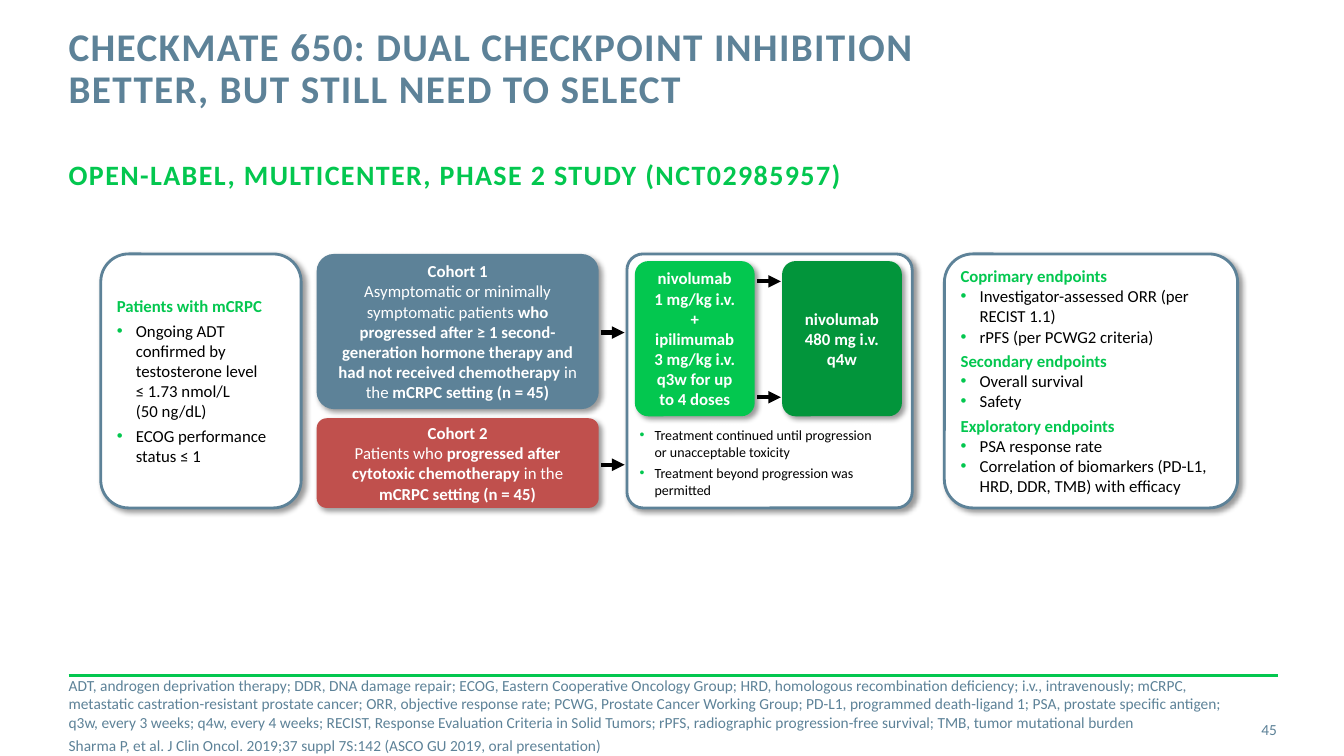
from copy import deepcopy
from dataclasses import dataclass
from typing import Optional

from lxml.etree import SubElement
from pptx import Presentation
from pptx.dml.color import RGBColor
from pptx.enum.shapes import MSO_CONNECTOR, MSO_SHAPE
from pptx.enum.text import MSO_ANCHOR, PP_ALIGN
from pptx.oxml.ns import qn
from pptx.util import Cm, Pt

FONT = "Calibri"
WHITE = RGBColor(0xFF, 0xFF, 0xFF)
BLACK = RGBColor(0x00, 0x00, 0x00)
SLATE = RGBColor(0x5D, 0x82, 0x98)
GREEN = RGBColor(0x03, 0xC7, 0x4F)
DARK_GREEN = RGBColor(0x02, 0x95, 0x3B)
RED = RGBColor(0xC0, 0x50, 0x4D)

ROW_TOP, ROW_HEIGHT = 6.4, 6.4
COHORT_LEFT, COHORT_WIDTH = 7.98, 7.11
DOSE_TOP, DOSE_WIDTH, DOSE_HEIGHT = 6.58, 3.02, 3.91
ARROW_LENGTH = 0.6


@dataclass(frozen=True)
class Phrase:
    text: str
    bold: bool = False


@dataclass(frozen=True)
class Line:
    phrases: tuple[Phrase, ...]
    color: RGBColor = BLACK
    size: float = 12
    after: float = 0
    indent: float = 0
    align: PP_ALIGN = PP_ALIGN.LEFT
    tracking: int = 0
    spacing: Optional[float] = None


@dataclass(frozen=True)
class Box:
    left: float
    top: float
    width: float
    height: float
    lines: tuple[Line, ...]
    corner: float = 0.112
    fill: RGBColor = WHITE
    outline: Optional[RGBColor] = None
    anchor: MSO_ANCHOR = MSO_ANCHOR.MIDDLE


@dataclass(frozen=True)
class Arrow:
    left: float
    top: float


def heading(text: str, after: float = 0) -> Line:
    return Line((Phrase(text, True),), GREEN, after=after)


def bullet(text: str, after: float = 0, size: float = 12, indent: float = 0.48) -> Line:
    return Line((Phrase(text),), size=size, after=after, indent=indent)


def centred(*phrases: Phrase, after: float = 0) -> Line:
    return Line(phrases, WHITE, after=after, align=PP_ALIGN.CENTER)


def write_line(paragraph, line: Line) -> None:
    paragraph.alignment = line.align
    paragraph.space_after = Pt(line.after)
    if line.spacing:
        paragraph.line_spacing = Pt(line.spacing)
    if line.indent:
        properties = paragraph._p.get_or_add_pPr()
        properties.set("marL", str(Cm(line.indent)))
        properties.set("indent", str(-Cm(line.indent)))
        SubElement(SubElement(properties, qn("a:buClr")), qn("a:srgbClr"), val=str(GREEN))
        SubElement(properties, qn("a:buFont"), typeface="Arial")
        SubElement(properties, qn("a:buChar"), char="•")
    first, *others = line.phrases
    paragraph.text = first.text
    styled = [(run, first.bold) for run in paragraph.runs]
    for phrase in others:
        run = paragraph.add_run()
        run.text = phrase.text
        styled.append((run, phrase.bold))
    for run, bold in styled:
        run.font.name = FONT
        run.font.size = Pt(line.size)
        run.font.bold = bold
        run.font.color.rgb = line.color
        if line.tracking:
            run.font._element.set("spc", str(line.tracking))
    # Line breaks keep the height of the text around them
    for line_break in paragraph._p.findall(qn("a:br")):
        line_break.append(deepcopy(styled[0][0].font._element))


def write_lines(text_frame, lines: tuple[Line, ...]) -> None:
    text_frame.word_wrap = True
    for index, line in enumerate(lines):
        write_line(text_frame.add_paragraph() if index else text_frame.paragraphs[0], line)


def add_text(slide, left: float, top: float, width: float, height: float,
             *lines: Line, anchor: MSO_ANCHOR = MSO_ANCHOR.TOP) -> None:
    text_frame = slide.shapes.add_textbox(Cm(left), Cm(top), Cm(width), Cm(height)).text_frame
    text_frame.margin_left = text_frame.margin_right = 0
    text_frame.margin_top = text_frame.margin_bottom = 0
    text_frame.vertical_anchor = anchor
    write_lines(text_frame, lines)


def add_box(slide, box: Box) -> None:
    shape = slide.shapes.add_shape(MSO_SHAPE.ROUNDED_RECTANGLE, Cm(box.left), Cm(box.top),
                                   Cm(box.width), Cm(box.height))
    shape.adjustments[0] = box.corner
    shape.fill.solid()
    shape.fill.fore_color.rgb = box.fill
    if box.outline is None:
        shape.line.fill.background()
    else:
        shape.line.color.rgb = box.outline
        shape.line.width = Pt(2)
    shape.shadow.inherit = False
    shadow = SubElement(shape._element.spPr.find(qn("a:effectLst")), qn("a:outerShdw"),
                        blurRad=str(Pt(4)), dist=str(Pt(3)), dir=str(45 * 60000),
                        algn="tl", rotWithShape="0")
    color = SubElement(shadow, qn("a:srgbClr"), val=str(BLACK))
    SubElement(color, qn("a:alpha"), val="40000")
    text_frame = shape.text_frame
    text_frame.margin_left = text_frame.margin_right = Cm(0.2)
    text_frame.margin_top = text_frame.margin_bottom = Cm(0.13)
    text_frame.vertical_anchor = box.anchor
    write_lines(text_frame, box.lines)


def add_line(slide, left: float, top: float, length: float, color: RGBColor,
             width: float, arrow: bool = False) -> None:
    connector = slide.shapes.add_connector(MSO_CONNECTOR.STRAIGHT, Cm(left), Cm(top),
                                           Cm(left + length), Cm(top))
    connector.line.color.rgb = color
    connector.line.width = Pt(width)
    if arrow:
        SubElement(connector.line._get_or_add_ln(), qn("a:tailEnd"), type="triangle")
    SubElement(connector._element.spPr, qn("a:effectLst"))


SETTING = (Phrase("in the "), Phrase("mCRPC setting (n = 45)", True))
BOXES = (
    # Patients and endpoints
    Box(2.54, ROW_TOP, 5.05, ROW_HEIGHT, (
        heading("Patients with mCRPC", 3),
        bullet("Ongoing ADT confirmed by testosterone level \n≤ 1.73 nmol/L \n(50 ng/dL)", 3),
        bullet("ECOG performance status ≤ 1", 3)), 0.139, outline=SLATE),
    Box(23.8, ROW_TOP, 7.39, ROW_HEIGHT, (
        heading("Coprimary endpoints"),
        bullet("Investigator-assessed ORR (per RECIST 1.1)"),
        bullet("rPFS (per PCWG2 criteria)", 3),
        heading("Secondary endpoints"),
        bullet("Overall survival"),
        bullet("Safety", 3),
        heading("Exploratory endpoints"),
        bullet("PSA response rate"),
        bullet("Correlation of biomarkers (PD-L1, HRD, DDR, TMB) with efficacy", 3)), outline=SLATE),
    # Cohorts
    Box(COHORT_LEFT, ROW_TOP, COHORT_WIDTH, 3.91, (
        centred(Phrase("Cohort 1", True)),
        centred(Phrase("Asymptomatic or minimally symptomatic patients "),
                Phrase("who progressed after ≥ 1 second-generation hormone therapy and "
                       "had not received chemotherapy ", True), *SETTING)), fill=SLATE),
    Box(COHORT_LEFT, 10.54, COHORT_WIDTH, 2.26, (
        centred(Phrase("Cohort 2", True)),
        centred(Phrase("Patients who "), Phrase("progressed after cytotoxic chemotherapy ", True),
                *SETTING)), fill=RED),
    # Treatment
    Box(15.8, ROW_TOP, 7.19, ROW_HEIGHT, (
        bullet("Treatment continued until progression \nor unacceptable toxicity", 3, 10, 0.38),
        bullet("Treatment beyond progression was permitted", 3, 10, 0.38)),
        0.063, outline=SLATE, anchor=MSO_ANCHOR.BOTTOM),
    Box(16, DOSE_TOP, DOSE_WIDTH, DOSE_HEIGHT, (
        centred(Phrase("nivolumab\n1 mg/kg i.v.\n+\nipilimumab\n3 mg/kg i.v.\nq3w for up\nto 4 doses",
                       True), after=4),), fill=GREEN),
    Box(19.71, DOSE_TOP, DOSE_WIDTH, DOSE_HEIGHT, (
        centred(Phrase("nivolumab\n480 mg i.v.\nq4w", True), after=4),), fill=DARK_GREEN),
)
ARROWS = (Arrow(19.08, 7.09), Arrow(19.08, 10.01), Arrow(15.14, 8.38), Arrow(15.14, 11.71))
ABBREVIATIONS = (
    "ADT, androgen deprivation therapy; DDR, DNA damage repair; ECOG, Eastern Cooperative Oncology "
    "Group; HRD, homologous recombination deficiency; i.v., intravenously; mCRPC, metastatic "
    "castration-resistant prostate cancer; ORR, objective response rate; PCWG, Prostate Cancer "
    "Working Group; PD-L1, programmed death-ligand 1; PSA, prostate specific antigen; q3w, every "
    "3 weeks; q4w, every 4 weeks; RECIST, Response Evaluation Criteria in Solid Tumors; rPFS, "
    "radiographic progression-free survival; TMB, tumor mutational burden")
CITATION = "Sharma P, et al. J Clin Oncol. 2019;37 suppl 7S:142 (ASCO GU 2019, oral presentation)"


def main() -> None:
    presentation = Presentation()
    presentation.slide_width, presentation.slide_height = Cm(33.87), Cm(19.05)
    slide = presentation.slides.add_slide(presentation.slide_layouts[6])

    # Titles
    add_text(slide, 1.73, 0.69, 24.28, 2.24, Line(
        (Phrase("CHECKMATE 650: DUAL CHECKPOINT INHIBITION BETTER, BUT STILL NEED TO SELECT", True),),
        SLATE, 28, tracking=100, spacing=30))
    add_text(slide, 1.73, 3.96, 30.45, 1.2, Line(
        (Phrase("OPEN-LABEL, MULTICENTER, PHASE 2 STUDY (NCT02985957)", True),),
        GREEN, 20, tracking=100))

    # Study design
    for box in BOXES:
        add_box(slide, box)
    for arrow in ARROWS:
        add_line(slide, arrow.left, arrow.top, ARROW_LENGTH, BLACK, 3, arrow=True)

    # Footer
    add_line(slide, 1.73, 17.02, 30.48, GREEN, 2)
    add_text(slide, 1.73, 17.07, 29.82, 1.9, *(
        Line((Phrase(text),), SLATE, 11, after=3) for text in (ABBREVIATIONS, CITATION)),
        anchor=MSO_ANCHOR.MIDDLE)
    add_text(slide, 30, 17.86, 2.18, 1.02, Line((Phrase("45"),), SLATE, 11, align=PP_ALIGN.RIGHT),
             anchor=MSO_ANCHOR.MIDDLE)
    presentation.save("out.pptx")


if __name__ == "__main__":
    main()
